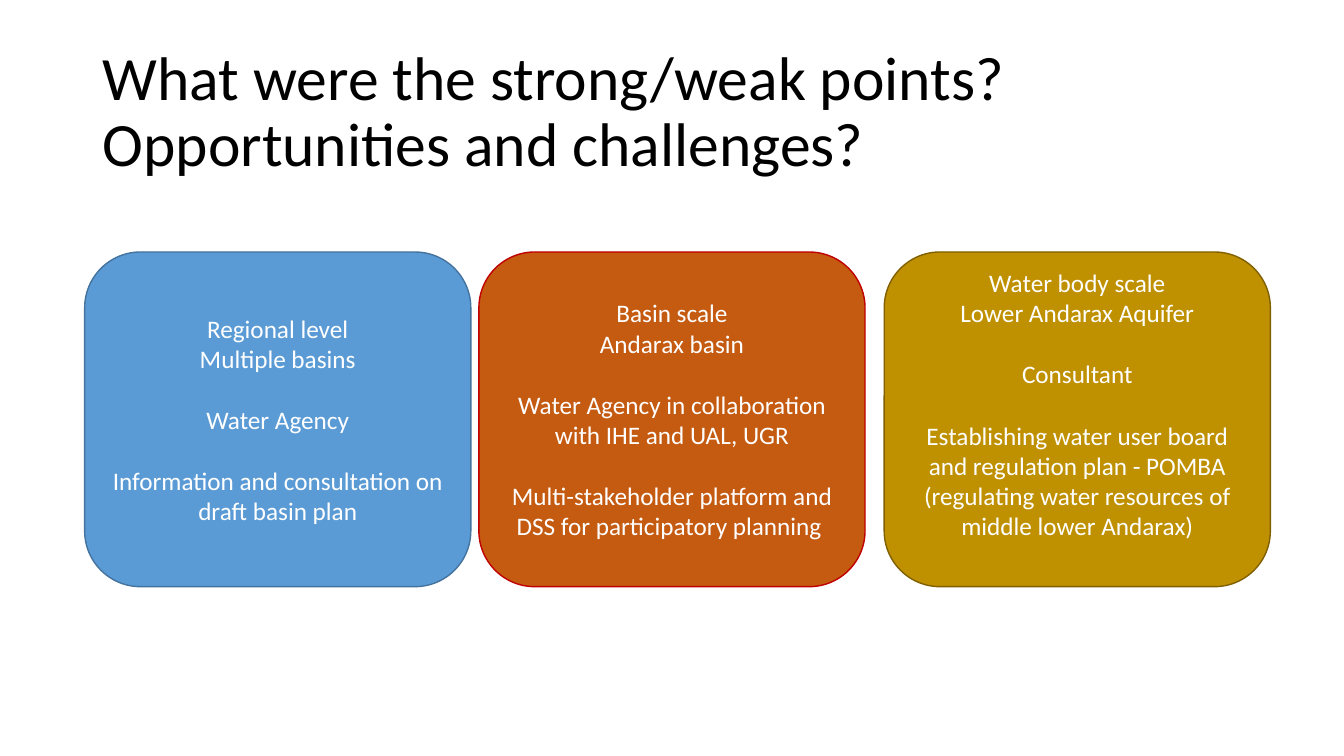
from pptx import Presentation
from pptx.dml.color import RGBColor
from pptx.enum.shapes import MSO_SHAPE
from pptx.enum.text import MSO_ANCHOR, PP_ALIGN
from pptx.util import Inches, Pt


def color(hex_string):
    return RGBColor.from_string(hex_string)


def add_text(tf, text, first=False, size=18, fill="FFFFFF", font="Calibri",
             align=PP_ALIGN.CENTER, before=0, line_spacing=1.0):
    p = tf.paragraphs[0] if first else tf.add_paragraph()
    p.alignment = align
    p.space_before = Pt(before)
    p.line_spacing = line_spacing
    r = p.add_run()
    r.text = text
    r.font.size = Pt(size)
    r.font.name = font
    r.font.color.rgb = color(fill)


class SlideBuilder:
    GROUP_GAP = 22  # points between groups of lines in a card

    def __init__(self, prs):
        self.s = prs.slides.add_slide(prs.slide_layouts[6])

    def frame(self, sp):
        tf = sp.text_frame
        tf.word_wrap = True
        tf.vertical_anchor = MSO_ANCHOR.MIDDLE
        return tf

    def title(self, text, left, top, width, height):
        sp = self.s.shapes.add_textbox(Inches(left), Inches(top),
                                       Inches(width), Inches(height))
        add_text(self.frame(sp), text, first=True, size=44, fill="000000",
                 align=PP_ALIGN.LEFT, line_spacing=0.9)

    def card(self, groups, left, top, width, height, fill, line, bottom=0.05):
        sp = self.s.shapes.add_shape(MSO_SHAPE.ROUNDED_RECTANGLE, Inches(left),
                                     Inches(top), Inches(width), Inches(height))
        sp.shadow.inherit = False
        sp.fill.solid()
        sp.fill.fore_color.rgb = color(fill)
        sp.line.color.rgb = color(line)
        sp.line.width = Pt(1)
        tf = self.frame(sp)
        tf.margin_bottom = Inches(bottom)
        for g, group in enumerate(groups):
            for i, text in enumerate(group):
                add_text(tf, text, first=g == i == 0,
                         before=self.GROUP_GAP if g and i == 0 else 0)


def main():
    prs = Presentation()
    prs.slide_width, prs.slide_height = Inches(13.33), Inches(7.5)
    slide = SlideBuilder(prs)

    # Title
    slide.title("What were the strong/weak points? Opportunities and challenges?",
                0.92, 0.4, 11.5, 1.45)

    # Cards, one per scale: left, fill, line, bottom inset, groups of lines
    cards = [
        (0.84, "5B9BD5", "43739E", 0.05,
         [["Regional level", "Multiple basins"],
          ["Water Agency"],
          ["Information and consultation on draft basin plan"]]),
        (4.75, "C55A11", "C00000", 0.05,
         [["Basin scale", "Andarax basin"],
          ["Water Agency in collaboration with IHE and UAL, UGR"],
          ["Multi-stakeholder platform and DSS for participatory planning "]]),
        (8.77, "BF9000", "806000", 0.35,
         [["Water body scale", "Lower Andarax Aquifer"],
          ["Consultant"],
          ["Establishing water user board and regulation plan - POMBA "
           "(regulating water resources of middle lower Andarax)"]]),
    ]
    for left, fill, line, bottom, groups in cards:
        slide.card(groups, left, 2.5, 3.83, 3.32, fill, line, bottom)

    prs.save("out.pptx")


if __name__ == "__main__":
    main()
